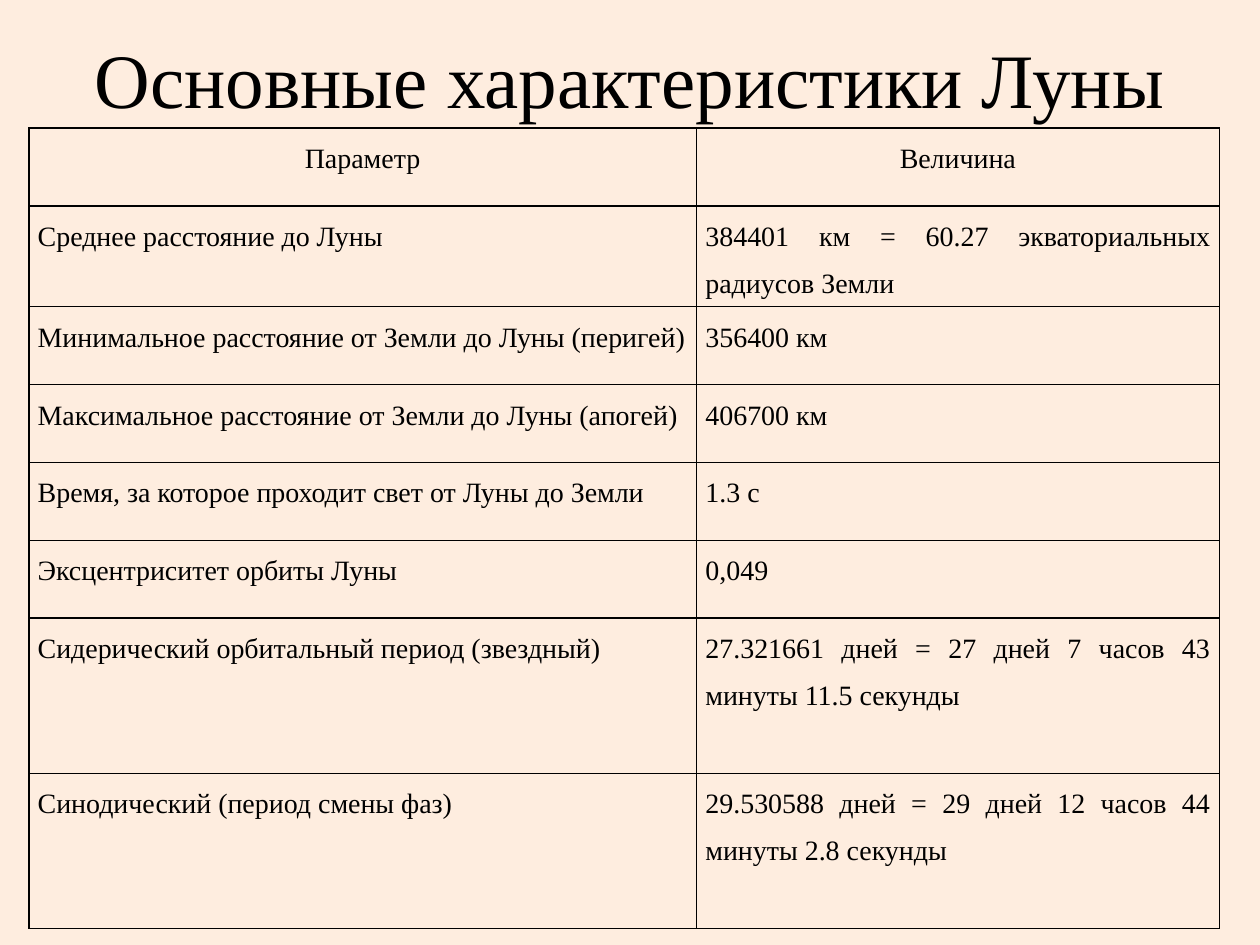
from lxml import etree
from pptx import Presentation
from pptx import util as u
from pptx.dml.color import RGBColor
from pptx.enum import text
from pptx.oxml.ns import qn

COLORS = {"background": "FEEDDF", "ink": "000000"}
ALIGN = text.PP_ALIGN


class Deck:
    font = "Times New Roman"
    inset = u.Cm(0.18)

    def __init__(self, width, height):
        self.prs = Presentation()
        self.prs.slide_width, self.prs.slide_height = u.Cm(width), u.Cm(height)
        self.slide = self.prs.slides.add_slide(self.prs.slide_layouts[6])
        fill = self.slide.background.fill
        fill.solid()
        fill.fore_color.rgb = RGBColor.from_string(COLORS["background"])

    def paragraph(self, p, value, size, align, spacing=1.0):
        p.text = value
        p.alignment = align
        p.line_spacing = spacing
        p.font.size = u.Pt(size)
        p.font.name = self.font
        p.font.bold = False
        p.font.color.rgb = RGBColor.from_string(COLORS["ink"])

    def title(self, value, left, top, width, height):
        sp = self.slide.shapes.add_textbox(*map(u.Cm, (left, top, width, height)))
        tf = sp.text_frame
        tf.word_wrap = True
        tf.vertical_anchor = text.MSO_ANCHOR.MIDDLE
        self.paragraph(tf.paragraphs[0], value, 44, ALIGN.CENTER)

    def borders(self, cell):
        tcPr = cell._tc.get_or_add_tcPr()
        for i, side in enumerate(("lnL", "lnR", "lnT", "lnB")):
            ln = etree.Element(qn(f"a:{side}"), w=str(u.Pt(1)))
            fill = etree.SubElement(ln, qn("a:solidFill"))
            etree.SubElement(fill, qn("a:srgbClr"), val=COLORS["ink"])
            tcPr.insert(i, ln)

    def table(self, rows, left, top, widths, heights):
        size = (left, top, sum(widths), sum(heights))
        frame = self.slide.shapes.add_table(len(rows), len(widths), *map(u.Cm, size))
        table = frame.table
        table.horz_banding = False
        for column, width in zip(table.columns, widths):
            column.width = u.Cm(width)
        for i, (row, height) in enumerate(zip(rows, heights)):
            table.rows[i].height = u.Cm(height)
            align = ALIGN.JUSTIFY if i else ALIGN.CENTER
            for j, value in enumerate(row):
                cell = table.cell(i, j)
                cell.fill.background()
                cell.margin_left = cell.margin_right = self.inset
                cell.margin_top = cell.margin_bottom = 0
                self.paragraph(cell.text_frame.paragraphs[0], value, 16, align, 1.5)
                self.borders(cell)


MOON = [
    ("Параметр", "Величина"),
    ("Среднее расстояние до Луны", "384401 км = 60.27 экваториальных радиусов Земли"),
    ("Минимальное расстояние от Земли до Луны (перигей)", "356400 км"),
    ("Максимальное расстояние от Земли до Луны (апогей)", "406700 км"),
    ("Время, за которое проходит свет от Луны до Земли", "1.3 с"),
    ("Эксцентриситет орбиты Луны", "0,049"),
    ("Сидерический орбитальный период (звездный)",
     "27.321661 дней = 27 дней 7 часов 43 минуты 11.5 секунды"),
    ("Синодический (период смены фаз)",
     "29.530588 дней = 29 дней 12 часов 44 минуты 2.8 секунды"),
]

deck = Deck(25.4, 19.05)
deck.title("Основные характеристики Луны", 1.27, 0.76, 22.86, 1.63)
deck.table(MOON, 0.58, 2.58, [13.46, 10.54], [1.57] * 6 + [3.13] * 2)
deck.prs.save("out.pptx")
